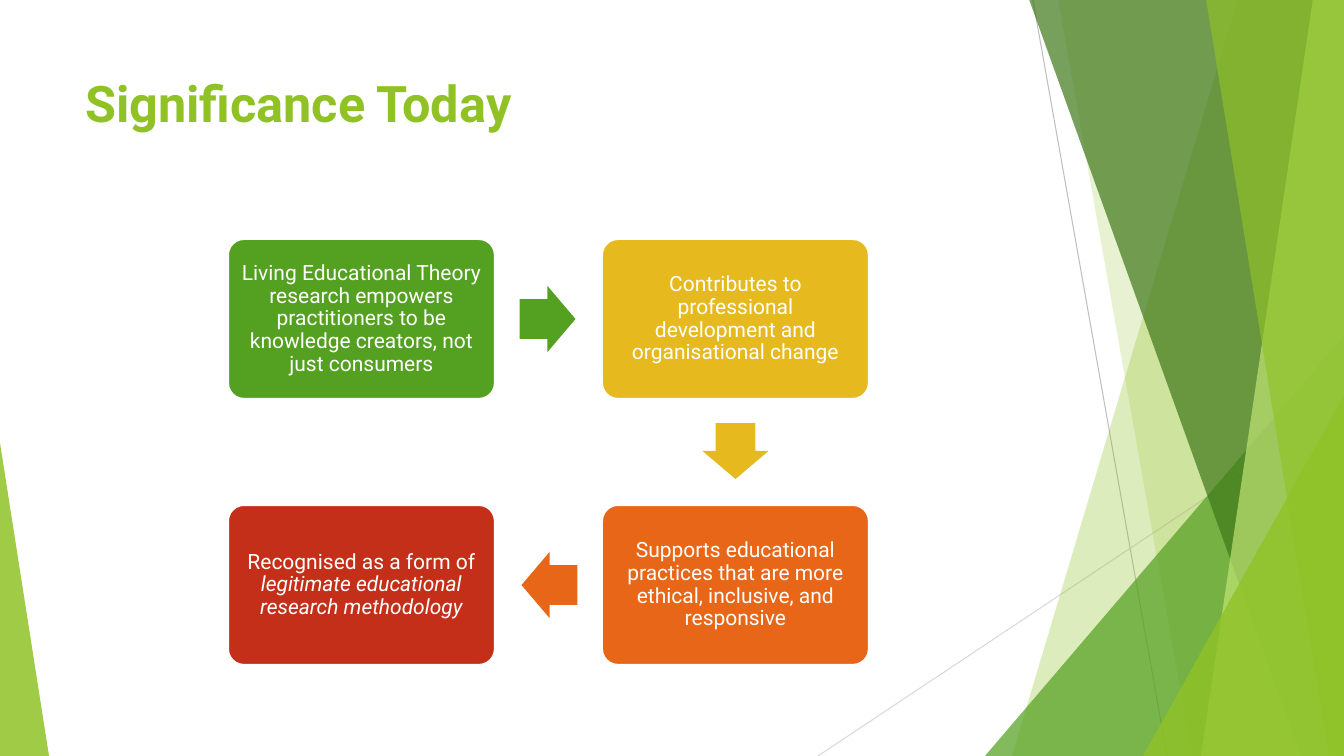
import math

from lxml import etree
from pptx import Presentation, util as u
from pptx.dml.color import RGBColor
from pptx.enum import shapes, text
from pptx.oxml.ns import qn

PX = u.Inches(1) / 100.8
WIDTH, HEIGHT = 1344, 756
FONT = "Roboto"
COLORS = {
    "lime": "90C226", "green": "54A021", "forest": "3F7819", "pale": "C0E474",
    "yellow": "E6B91E", "orange": "E76618", "red": "C42F1A",
    "white": "FFFFFF", "gray": "BFBFBF", "light gray": "D9D9D9",
}

TITLE = "Significance Today"
# column, row, colour, (text, italic) runs, in reading order
CARDS = [
    (0, 0, "green", [("Living Educational Theory research empowers practitioners "
                      "to be knowledge creators, not just consumers", False)]),
    (1, 0, "yellow", [("Contributes to professional development and "
                       "organisational change", False)]),
    (1, 1, "orange", [("Supports educational practices that are more ethical, "
                       "inclusive, and responsive", False)]),
    (0, 1, "red", [("Recognised as a form of ", False),
                   ("legitimate educational research methodology", True)]),
]
CARD_LEFT, CARD_TOP, CARD_W, CARD_H = 228, 239, 267, 160
STEP_X, STEP_Y = 374, 266
ARROW_W, ARROW_H, ARROW_LAG = 56, 66, 1

RAYS = [((1033, 0), (1167, HEIGHT), "gray"), ((WIDTH, 406), (818, HEIGHT), "light gray")]
# Bands run to the right edge: top x, bottom x, colour, opacity in percent
# Wedges are right triangles: left, top, width, height, apex, colour, opacity
BACKDROP = [
    ("band", (1238, 1012), "lime", 30),
    ("band", (1058, 1192), "lime", 20),
    ("wedge", (985, 336, 359, 420, 1), "green", 72),
    ("band", (1029, 1301), "forest", 70),
    ("band", (1313, 1201), "pale", 70),
    ("band", (1206, 1329), "lime", 65),
    ("wedge", (1143, 396, 201, 360, 1), "lime", 80),
    ("wedge", (0, 443, 49, 313, 0), "lime", 85),
]


def px(*lengths):
    return [round(length * PX) for length in lengths]


def rgb(name):
    return RGBColor.from_string(COLORS[name])


def paint(shape, color, opacity=100):
    shape.shadow.inherit = False
    shape.fill.solid()
    shape.fill.fore_color.rgb = rgb(color)
    shape.line.fill.background()
    if opacity < 100:
        fill = shape.fill._xPr.find(qn("a:solidFill"))
        etree.SubElement(fill[0], qn("a:alpha"), val=str(opacity * 1000))


def add_preset(page, kind, left, top, width, height, adjustments):
    shape = page.shapes.add_shape(kind, *px(left, top, width, height))
    for index, value in enumerate(adjustments):
        shape.adjustments[index] = value
    return shape


def add_backdrop(page):
    for start, end, color in RAYS:
        ray = page.shapes.add_connector(shapes.MSO_CONNECTOR.STRAIGHT, *px(*start, *end))
        ray.line.color.rgb = rgb(color)
        ray.line.width = u.Pt(0.75)
        etree.SubElement(ray._element.spPr, qn("a:effectLst"))
    for kind, geometry, color, opacity in BACKDROP:
        if kind == "band":
            top_x, bottom_x = geometry
            outline = page.shapes.build_freeform(top_x, -1, scale=PX)
            outline.add_line_segments([(WIDTH, -1), (WIDTH, HEIGHT), (bottom_x, HEIGHT)])
            shape = outline.convert_to_shape()
        else:
            *frame, apex = geometry
            shape = add_preset(page, shapes.MSO_SHAPE.ISOSCELES_TRIANGLE, *frame, [apex])
        paint(shape, color, opacity)


def add_title(page):
    title = page.shapes.title
    title.left, title.top, title.width, title.height = px(75, 67, 947, 145)
    frame = title.text_frame
    frame.text = TITLE
    frame.vertical_anchor = text.MSO_ANCHOR.TOP
    para = frame.paragraphs[0]
    para.alignment = text.PP_ALIGN.LEFT
    para.font.name, para.font.size, para.font.bold = FONT, u.Pt(36), True
    para.font.color.rgb = rgb("lime")


def add_card(page, column, row, color, runs):
    card = add_preset(page, shapes.MSO_SHAPE.ROUNDED_RECTANGLE,
                      CARD_LEFT + column * STEP_X, CARD_TOP + row * STEP_Y,
                      CARD_W, CARD_H, [0.1])
    paint(card, color)
    card.line.color.rgb = rgb("white")
    card.line.width = u.Pt(1.5)
    frame = card.text_frame
    frame.word_wrap = True
    frame.vertical_anchor = text.MSO_ANCHOR.MIDDLE
    frame.margin_left = frame.margin_right = frame.margin_top = frame.margin_bottom = px(9)[0]
    para = frame.paragraphs[0]
    para.alignment = text.PP_ALIGN.CENTER
    para.line_spacing = 0.9
    para.font.name, para.font.size = FONT, u.Pt(15)
    para.font.color.rgb = rgb("white")
    for words, italic in runs:
        span = para.add_run()
        span.text = words
        if italic:
            span.font.italic = True


def add_arrow(page, card, following):
    """Point from one card to the next, just short of the middle of the gap."""
    across, down = following[0] - card[0], following[1] - card[1]
    center_x = CARD_LEFT + CARD_W / 2 + (card[0] + across / 2) * STEP_X - across * ARROW_LAG
    center_y = CARD_TOP + CARD_H / 2 + (card[1] + down / 2) * STEP_Y - down * ARROW_LAG
    arrow = add_preset(page, shapes.MSO_SHAPE.RIGHT_ARROW,
                       center_x - ARROW_W / 2, center_y - ARROW_H / 2,
                       ARROW_W, ARROW_H, [0.6, 0.5])
    arrow.rotation = math.degrees(math.atan2(down, across))
    paint(arrow, card[2])


def main():
    deck = Presentation()
    deck.slide_width, deck.slide_height = px(WIDTH, HEIGHT)
    page = deck.slides.add_slide(deck.slide_layouts[5])
    add_backdrop(page)
    add_title(page)
    for card in CARDS:
        add_card(page, *card)
    for card, following in zip(CARDS, CARDS[1:]):
        add_arrow(page, card, following)
    deck.save("out.pptx")


if __name__ == "__main__":
    main()
